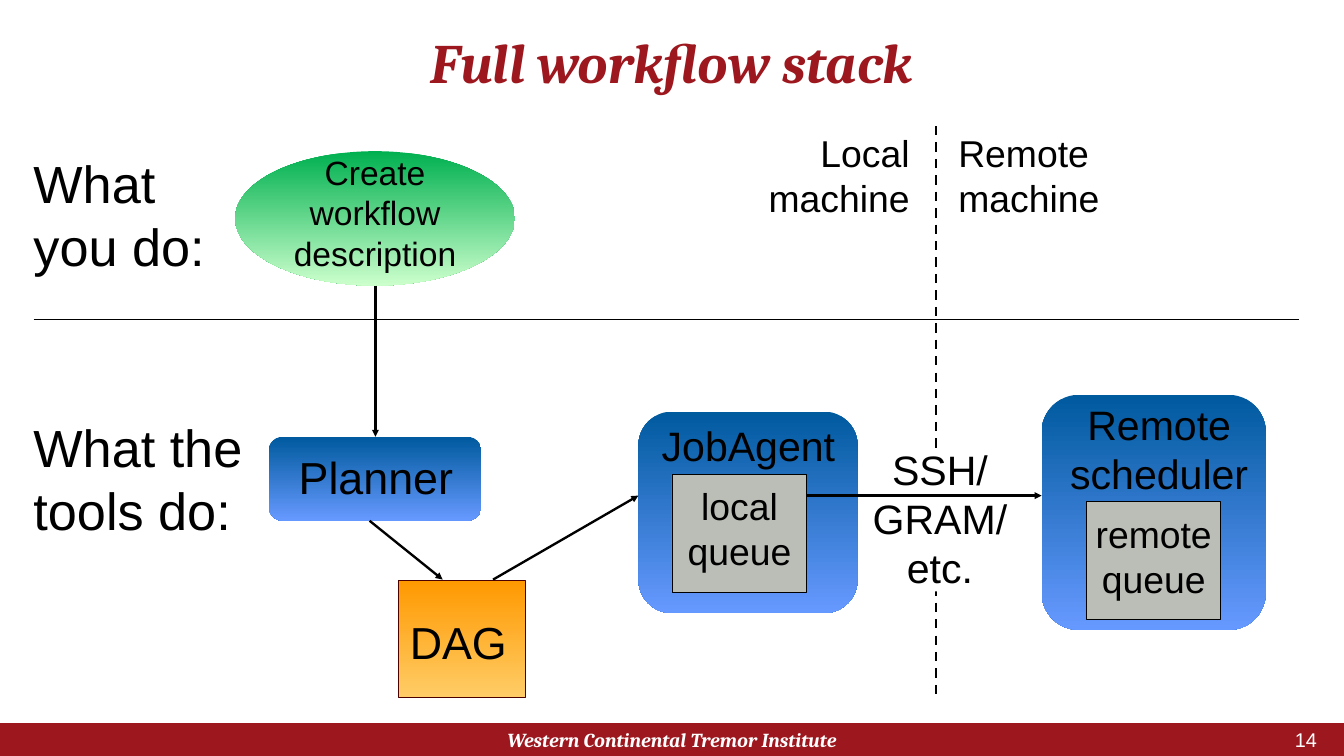
from dataclasses import dataclass

from pptx import Presentation
from pptx.dml.color import RGBColor
from pptx.enum.dml import MSO_LINE_DASH_STYLE as Dash
from pptx.enum.shapes import MSO_CONNECTOR as Connector
from pptx.enum.shapes import MSO_SHAPE as Shape
from pptx.enum.text import MSO_ANCHOR as Anchor
from pptx.enum.text import MSO_AUTO_SIZE as AutoSize
from pptx.enum.text import PP_ALIGN as Align
from pptx.oxml.ns import qn
from pptx.util import Inches, Pt
from lxml.etree import SubElement


@dataclass(frozen=True)
class Theme:
    body: str = "Arial"
    serif: str = "Cambria"
    crimson: str = "9D171E"
    black: str = "000000"
    white: str = "FFFFFF"
    gray: str = "BABEB6"
    maroon: str = "4C0000"
    green: tuple = ("00B050", "CCFFCC")
    blue: tuple = ("005A9E", "6699FF")
    orange: tuple = ("FF9900", "FFCC66")
    title: float = 47.7
    heading: float = 44.8
    tool: float = 38.4
    system: float = 35.2
    queue: float = 32
    step: float = 28.8
    footer: float = 17


def write(frame, text, size, font, color, align=Align.LEFT, anchor=Anchor.TOP,
          bold=False, italic=False, spacing=None, insets=(0.1, 0.05)):
    frame.word_wrap = True
    frame.auto_size = AutoSize.NONE
    frame.vertical_anchor = anchor
    frame.margin_left = frame.margin_right = Inches(insets[0])
    frame.margin_top = frame.margin_bottom = Inches(insets[1])
    frame.text = text
    for paragraph in frame.paragraphs:
        paragraph.alignment = align
        paragraph.line_spacing = spacing
        for run in paragraph.runs:
            run.font.name = font
            run.font.size = Pt(size)
            run.font.bold = bold
            run.font.italic = italic
            run.font.color.rgb = RGBColor.from_string(color)


class WorkflowSlide:
    COLUMNS, ROWS = 16, 9
    BANNER = dict(bold=True, italic=True, align=Align.CENTER, insets=(0.12, 0.06))

    def __init__(self, deck, theme):
        self.theme = theme
        self.column = deck.slide_width / self.COLUMNS
        self.row = deck.slide_height / self.ROWS
        self.slide = deck.slides.add_slide(deck.slide_layouts[5])
        self.shapes = self.slide.shapes

    def place(self, *cells):
        units = (self.column, self.row) * (len(cells) // 2)
        return [round(cell * unit) for cell, unit in zip(cells, units)]

    def title(self, text, *cells):
        heading = self.shapes.title
        heading.left, heading.top, heading.width, heading.height = self.place(*cells)
        write(heading.text_frame, text, self.theme.title, self.theme.serif,
              self.theme.crimson, spacing=0.9, **self.BANNER)

    def block(self, kind, cells, fill, outline=None):
        block = self.shapes.add_shape(kind, *self.place(*cells))
        block.shadow.inherit = False
        if isinstance(fill, tuple):
            block.fill.gradient()
            block.fill.gradient_angle = 270
            for stop, color in zip(block.fill.gradient_stops, fill):
                stop.color.rgb = RGBColor.from_string(color)
        else:
            block.fill.solid()
            block.fill.fore_color.rgb = RGBColor.from_string(fill)
        if outline:
            block.line.color.rgb = RGBColor.from_string(outline)
            block.line.width = Pt(0.75)
        else:
            block.line.fill.background()

    def label(self, text, cells, size, font=None, color=None, **style):
        box = self.shapes.add_textbox(*self.place(*cells))
        write(box.text_frame, text, size, font or self.theme.body,
              color or self.theme.black, **style)

    def line(self, *cells, width=2, dash=None, arrow=False):
        line = self.shapes.add_connector(Connector.STRAIGHT, *self.place(*cells))
        line.line.color.rgb = RGBColor.from_string(self.theme.black)
        line.line.width = Pt(width)
        if dash:
            line.line.dash_style = dash
        properties = line._element.spPr
        if arrow:
            SubElement(properties.find(qn("a:ln")), qn("a:tailEnd"), type="triangle")
        SubElement(properties, qn("a:effectLst"))

    def footer(self, text, number):
        top, height = 8.61, 0.39
        self.block(Shape.RECTANGLE, (0, top, self.COLUMNS, height), self.theme.crimson)
        self.label(text, (5.3, top, 5.4, height), self.theme.footer, self.theme.serif,
                   self.theme.white, anchor=Anchor.MIDDLE, **self.BANNER)
        self.label(number, (14.3, top, 1.5, height), self.theme.footer,
                   color=self.theme.white, align=Align.RIGHT, anchor=Anchor.MIDDLE,
                   insets=(0.12, 0.06))


def main():
    deck = Presentation()
    deck.slide_width, deck.slide_height = Inches(16), Inches(9)
    theme = Theme()
    stack = WorkflowSlide(deck, theme)

    stack.title("Full workflow stack", 0.4, 0.36, 15.2, 0.84)
    stack.footer("Western Continental Tremor Institute", "14")

    for kind, cells, fill, outline in (
        (Shape.RECTANGLE, (4.74, 6.91, 1.51, 1.39), theme.orange, theme.maroon),
        (Shape.OVAL, (2.8, 1.8, 3.33, 1.6), theme.green, None),
        (Shape.ROUNDED_RECTANGLE, (3.2, 5.2, 2.53, 1), theme.blue, None),
        (Shape.ROUNDED_RECTANGLE, (7.6, 4.9, 2.61, 2.4), theme.blue, None),
        (Shape.ROUNDED_RECTANGLE, (12.4, 4.7, 2.67, 2.8), theme.blue, None),
        (Shape.RECTANGLE, (8, 5.65, 1.6, 1.4), theme.gray, theme.black),
        (Shape.RECTANGLE, (12.93, 5.97, 1.6, 1.4), theme.gray, theme.black),
    ):
        stack.block(kind, cells, fill, outline)

    stack.line(0.4, 3.8, 15.47, 3.8, width=1)
    stack.line(11.14, 1.5, 11.14, 8.3, dash=Dash.DASH)
    stack.block(Shape.RECTANGLE, (10.31, 5.34, 1.87, 1.7), theme.white)

    for text, cells, size, align in (
        ("What you do:", (0.3, 1.75, 2.53, 1.61), theme.heading, Align.LEFT),
        ("What the tools do:", (0.3, 4.9, 3.2, 1.61), theme.heading, Align.LEFT),
        ("Create workflow description", (3.2, 1.76, 2.53, 1.56), theme.step, Align.CENTER),
        ("Planner", (3.14, 5.3, 2.67, 0.75), theme.tool, Align.CENTER),
        ("DAG", (4.78, 7.27, 1.51, 0.75), theme.tool, Align.LEFT),
        ("JobAgent", (7.51, 4.95, 2.8, 0.69), theme.system, Align.CENTER),
        ("Remote scheduler", (12.4, 4.7, 2.8, 1.29), theme.system, Align.CENTER),
        ("local queue", (7.87, 5.7, 1.87, 1.18), theme.queue, Align.CENTER),
        ("remote queue", (12.8, 6.04, 1.87, 1.18), theme.queue, Align.CENTER),
        ("Local machine", (8.53, 1.5, 2.4, 1.18), theme.queue, Align.RIGHT),
        ("Remote machine", (11.31, 1.5, 2.27, 1.18), theme.queue, Align.LEFT),
        ("SSH/\vGRAM/\netc.", (10.19, 5.24, 2, 1.88), theme.system, Align.CENTER),
    ):
        stack.label(text, cells, size, align=align)

    for ends in (
        (4.47, 3.4, 4.47, 5.2),
        (4.4, 6.2, 5.27, 6.9),
        (5.87, 6.9, 7.6, 5.9),
        (9.6, 5.9, 12.4, 5.9),
    ):
        stack.line(*ends, arrow=True)

    deck.save("out.pptx")


if __name__ == "__main__":
    main()
